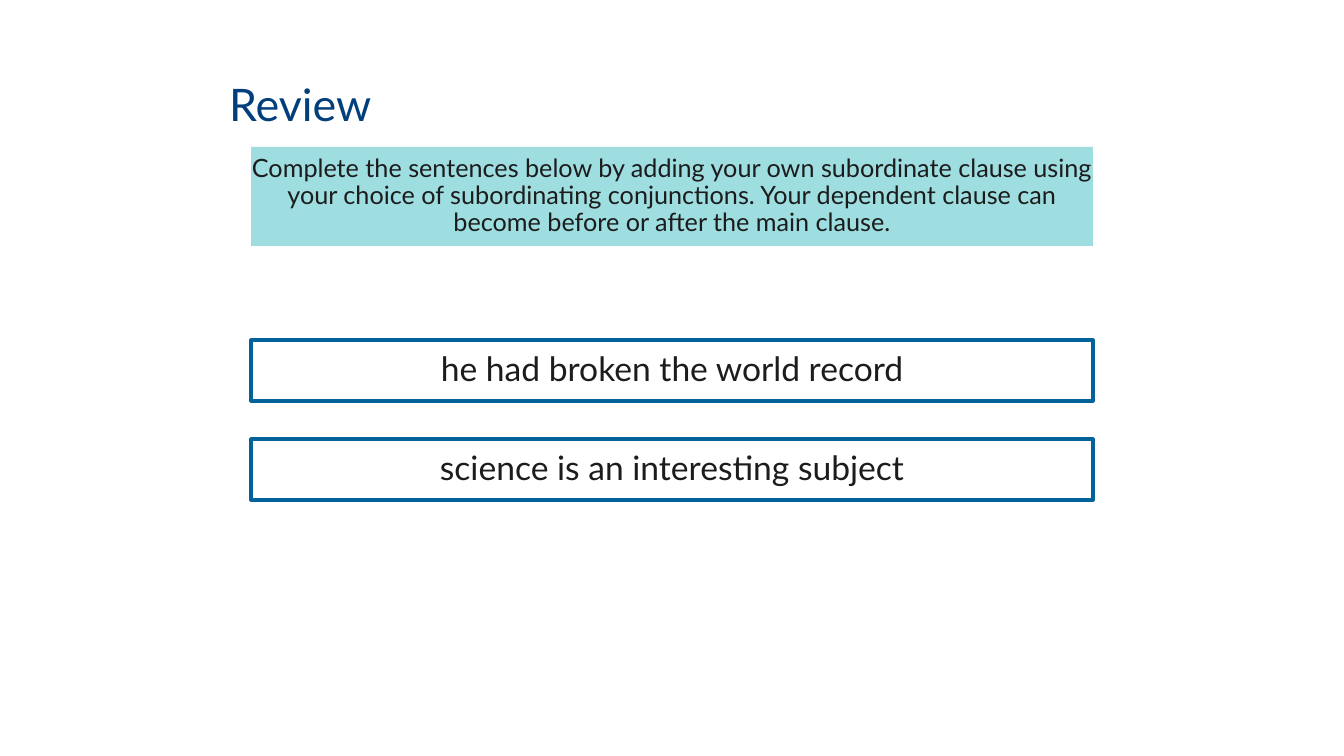
from dataclasses import dataclass

from lxml.etree import SubElement
from pptx import Presentation
from pptx.dml.color import RGBColor
from pptx.enum.shapes import MSO_SHAPE
from pptx.enum.text import MSO_ANCHOR, MSO_AUTO_SIZE, PP_ALIGN
from pptx.oxml.ns import qn
from pptx.util import Emu, Pt

EMU_PER_PX = 914400 / 100.8


def px(length):
    return Emu(round(length * EMU_PER_PX))


@dataclass(frozen=True)
class Theme:
    font: str = "Lato"
    title_color: str = "013F7C"
    text_color: str = "1C1C1C"
    task_fill: str = "2DB6BC"
    sentence_fill: str = "FFFFFF"
    sentence_line: str = "016399"
    fill_opacity: int = 46  # percent
    line_width: float = 2.25
    title_size: int = 32
    task_size: int = 18
    sentence_size: int = 24


class SlideBuilder:
    def __init__(self, slide, theme):
        self.slide = slide
        self.theme = theme

    def set_text(self, text_frame, text, size, color, align):
        text_frame.text = text
        text_frame.word_wrap = True
        text_frame.vertical_anchor = MSO_ANCHOR.MIDDLE
        paragraph = text_frame.paragraphs[0]
        paragraph.alignment = align
        paragraph.line_spacing = 0.9
        paragraph.space_before = Pt(0)
        font = paragraph.runs[0].font
        font.name = self.theme.font
        font.size = Pt(size)
        font.color.rgb = RGBColor.from_string(color)

    def title(self, text, left, top, width, height):
        shape = self.slide.shapes.title
        shape.left, shape.top = px(left), px(top)
        shape.width, shape.height = px(width), px(height)
        shape.text_frame.auto_size = MSO_AUTO_SIZE.NONE
        self.set_text(shape.text_frame, text, self.theme.title_size,
                      self.theme.title_color, PP_ALIGN.LEFT)

    def box(self, text, bounds, size, fill, inset_x, inset_y, line=None):
        shape = self.slide.shapes.add_shape(
            MSO_SHAPE.RECTANGLE, *(px(length) for length in bounds))
        shape.shadow.inherit = False

        # Translucent fill and optional outline
        shape.fill.solid()
        shape.fill.fore_color.rgb = RGBColor.from_string(fill)
        properties = shape.element.find(qn("p:spPr"))
        color = properties.find(qn("a:solidFill")).find(qn("a:srgbClr"))
        SubElement(color, qn("a:alpha"), val=str(self.theme.fill_opacity * 1000))
        if line:
            shape.line.color.rgb = RGBColor.from_string(line)
            shape.line.width = Pt(self.theme.line_width)
        else:
            shape.line.fill.background()

        # Text
        frame = shape.text_frame
        frame.margin_left = frame.margin_right = px(inset_x)
        frame.margin_top = frame.margin_bottom = px(inset_y)
        frame.auto_size = MSO_AUTO_SIZE.SHAPE_TO_FIT_TEXT
        self.set_text(frame, text, size, self.theme.text_color, PP_ALIGN.CENTER)


def main():
    presentation = Presentation()
    presentation.slide_width, presentation.slide_height = px(1344), px(756)
    title_only = presentation.slide_layouts[5]
    theme = Theme()
    builder = SlideBuilder(presentation.slides.add_slide(title_only), theme)

    # Heading and task
    builder.title("Review", 219, 52, 906, 110)
    left, width = 251, 842
    builder.box(
        "Complete the sentences below by adding your own subordinate clause "
        "using your choice of subordinating conjunctions. Your dependent "
        "clause can become before or after the main clause.",
        (left, 147, width, 99), theme.task_size, theme.task_fill, 0, 8)

    # Sentences to complete
    sentences = ["he had broken the world record",
                 "science is an interesting subject"]
    first_top, pitch = 340, 99
    for index, sentence in enumerate(sentences):
        builder.box(sentence, (left, first_top + index * pitch, width, 61),
                    theme.sentence_size, theme.sentence_fill, 12, 12,
                    theme.sentence_line)

    presentation.save("out.pptx")


if __name__ == "__main__":
    main()
